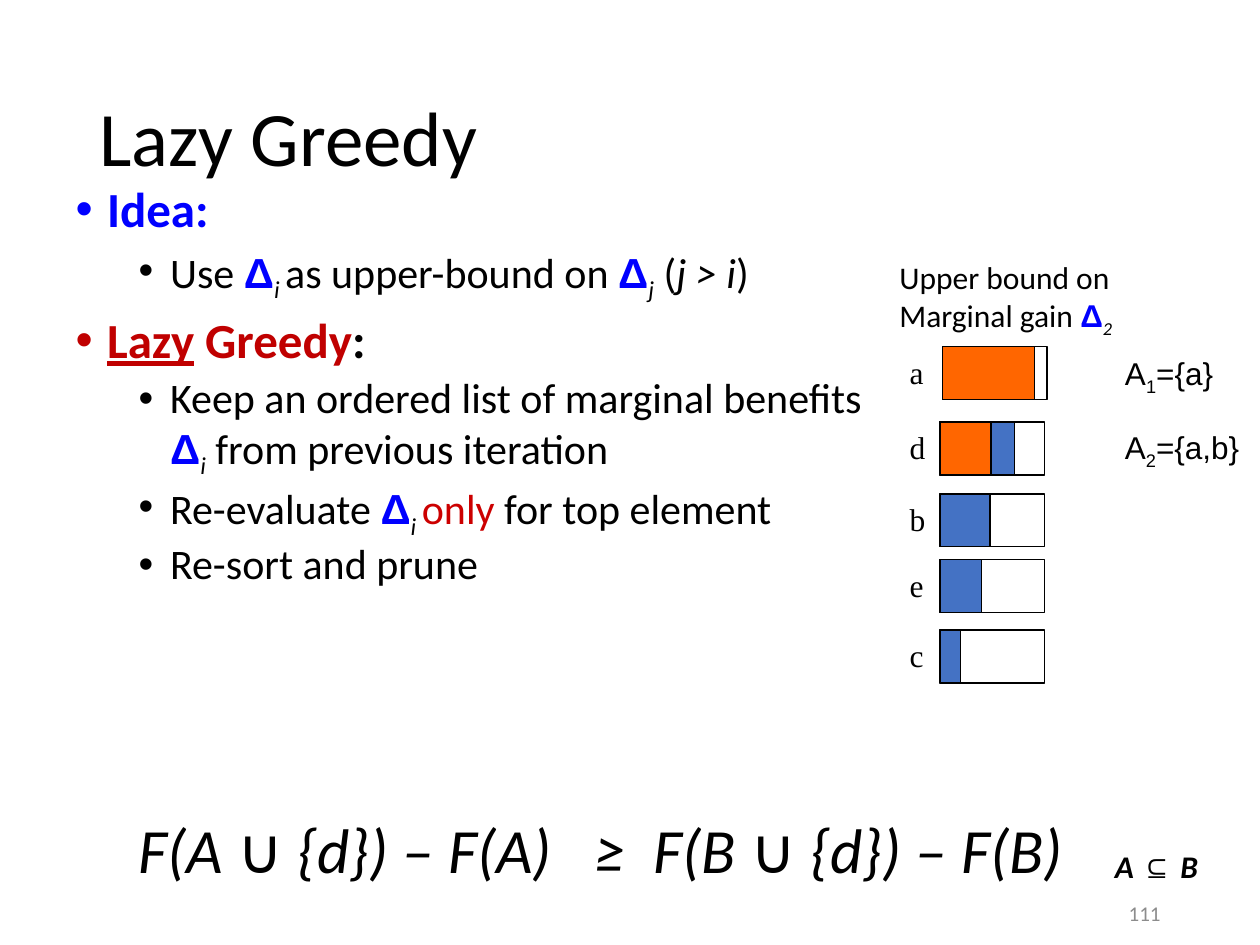
from dataclasses import dataclass

from lxml import etree
from pptx import Presentation
from pptx import util as u
from pptx.dml.color import RGBColor
from pptx.enum import shapes, text
from pptx.oxml.ns import qn


@dataclass(frozen=True)
class Theme:
    sans: str = "Calibri"
    symbol: str = "Arial"
    serif: str = "Times New Roman"
    ink: str = "000000"
    blue: str = "0000FF"
    crimson: str = "C00000"
    red: str = "CC0000"
    grey: str = "8C8C8C"
    bar: str = "4472C4"
    updated: str = "FF6600"
    title: int = 44
    formula: int = 36
    head: int = 28
    body: int = 24
    label: int = 18
    number: int = 12


THEME = Theme()

# Run formats
DELTA = dict(font=THEME.symbol, color=THEME.blue, bold=True)
INDEX = dict(italic=True, base=-25)
ITALIC = dict(italic=True)
LOWER = dict(base=-25)

# Content: each run is (text, format)
TITLE = "Lazy Greedy"
BULLETS = [
    (0, [("Idea:", dict(color=THEME.blue, bold=True))]),
    (1, [("Use ", {}), ("Δ", DELTA), ("i ", INDEX), ("as upper-bound on ", {}),
         ("Δ", DELTA), ("j", INDEX), (" (", {}), ("j > i", ITALIC), (")", {})]),
    (0, [("Lazy", dict(color=THEME.crimson, bold=True, underline=True)),
         (" Greedy", dict(color=THEME.crimson, bold=True)), (":", dict(bold=True))]),
    (1, [("Keep an ordered list of marginal benefits ", {}), ("Δ", DELTA),
         ("i", INDEX), (" from previous iteration", {})]),
    (1, [("Re-evaluate ", {}), ("Δ", DELTA), ("i ", INDEX),
         ("only ", dict(color=THEME.red)), ("for top element", {})]),
    (1, [("Re-sort and prune", {})]),
]
# Bars: label, left, top, then filled shares of the full width
BARS = [
    ("a", 74.8, 27.5, [(0.88, THEME.updated)]),
    ("d", 74.6, 33.5, [(0.71, THEME.bar), (0.49, THEME.updated)]),
    ("b", 74.6, 39.2, [(0.48, THEME.bar)]),
    ("e", 74.6, 44.4, [(0.4, THEME.bar)]),
    ("c", 74.6, 50, [(0.2, THEME.bar)]),
]
# Notes: box on the grid, size, font, wrap, runs
NOTES = [
    ((70.4, 20, 19.4, 7.1), THEME.label, THEME.sans, False,
     [("Upper bound on \nMarginal gain ", {}), ("Δ", DELTA), ("2", INDEX)]),
    ((88.3, 27.6, 9.2, 4), THEME.label, THEME.symbol, False,
     [("A", {}), ("1", LOWER), ("={a}", {})]),
    ((88.3, 33.5, 11.3, 4), THEME.label, THEME.symbol, False,
     [("A", {}), ("2", LOWER), ("={a,b}", {})]),
    ((87.5, 66.7, 8.7, 4), THEME.label, THEME.sans, False,
     [("A ", dict(bold=True, italic=True)), ("⊆ ", dict(bold=True, font=THEME.serif)),
      ("B", dict(bold=True, italic=True))]),
]
FORMULA = "F(A ∪ {d}) – F(A)\t≥\tF(B ∪ {d}) – F(B)"
FORMULA_TABS = (36.2, 40.9)
BAR_SIZE = (8.3, 4.2)

# Grid of 100 columns by 75 rows
presentation = Presentation()
presentation.slide_width, presentation.slide_height = u.Inches(10), u.Inches(7.5)
CELL = presentation.slide_width / 100
slide = presentation.slides.add_slide(presentation.slide_layouts[1])


def grid(*lengths):
    return [round(length * CELL) for length in lengths]


def write(paragraph, content, size, font=THEME.sans, color=THEME.ink,
          bold=False, italic=False, underline=False, base=0):
    for number, line in enumerate(content.split("\n")):
        if number:
            paragraph.add_line_break()
        run = paragraph.add_run()
        run.text = line
        style = run.font
        style.size, style.name = u.Pt(size), font
        style.color.rgb = RGBColor.from_string(color)
        style.bold, style.italic, style.underline = bold, italic, underline
        if base:
            run._r.get_or_add_rPr().set("baseline", str(base * 1000))


def write_runs(paragraph, runs, size, font=THEME.sans):
    for content, style in runs:
        write(paragraph, content, size, **{"font": font, **style})


def place(shape, box):
    shape.left, shape.top, shape.width, shape.height = grid(*box)


def add_note(box, size, font, wrap, runs):
    frame = slide.shapes.add_textbox(*grid(*box)).text_frame
    frame.word_wrap = wrap
    frame.auto_size = text.MSO_AUTO_SIZE.SHAPE_TO_FIT_TEXT
    write_runs(frame.paragraphs[0], runs, size, font)
    return frame


def add_bar(left, top, share=1, color=None):
    width, height = BAR_SIZE
    shape = slide.shapes.add_shape(
        shapes.MSO_SHAPE.RECTANGLE, *grid(left, top, width * share, height))
    shape.shadow.inherit = False
    if color:
        shape.fill.solid()
        shape.fill.fore_color.rgb = RGBColor.from_string(color)
    else:
        shape.fill.background()
    shape.line.color.rgb = RGBColor.from_string(THEME.ink)
    shape.line.width = u.Pt(0.75)


def set_bullet(paragraph, level):
    properties = paragraph._p.get_or_add_pPr()
    properties.set("marL", str(u.Inches(0.25 + 0.5 * level)))
    properties.set("indent", str(u.Inches(-0.25)))
    etree.SubElement(properties, qn("a:buFont"), typeface=THEME.symbol)
    etree.SubElement(properties, qn("a:buChar"), char="•")


# Title
title = slide.shapes.title
place(title, (6.9, 4, 86.2, 14.5))
title.text_frame.vertical_anchor = text.MSO_ANCHOR.MIDDLE
title.text_frame.auto_size = text.MSO_AUTO_SIZE.NONE
heading = title.text_frame.paragraphs[0]
heading.alignment, heading.line_spacing = text.PP_ALIGN.LEFT, 0.9
write(heading, TITLE, THEME.title)

# Bulleted list
body = slide.placeholders[1]
place(body, (5, 14.2, 65.4, 47.5))
body.text_frame.auto_size = text.MSO_AUTO_SIZE.NONE
for number, (level, runs) in enumerate(BULLETS):
    paragraph = body.text_frame.add_paragraph() if number else body.text_frame.paragraphs[0]
    paragraph.level, paragraph.line_spacing = level, 0.9
    paragraph.space_before = u.Pt(5 if level else 10)
    set_bullet(paragraph, level)
    write_runs(paragraph, runs, THEME.body if level else THEME.head)

# Marginal gain bars
for label, left, top, parts in BARS:
    add_bar(left, top)
    for share, color in parts:
        add_bar(left, top, share, color)
    add_note((71.2, top, 3.2, 4), THEME.label, THEME.serif, False, [(label, {})])

# Notes beside the bars and the formula
for note in NOTES:
    add_note(*note)

# Formula, its parts set on tab stops
formula = add_note((10, 63.8, 83.3, 7.1), THEME.formula, THEME.sans, True, [(FORMULA, ITALIC)])
stops = etree.SubElement(formula.paragraphs[0]._p.get_or_add_pPr(), qn("a:tabLst"))
for position in grid(*FORMULA_TABS):
    etree.SubElement(stops, qn("a:tab"), pos=str(position), algn="l")

# Slide number
footer = slide.shapes.add_textbox(*grid(70.6, 69.5, 22.5, 4)).text_frame
footer.word_wrap = True
footer.vertical_anchor, footer.margin_bottom = text.MSO_ANCHOR.BOTTOM, 0
footer.paragraphs[0].alignment = text.PP_ALIGN.RIGHT
write(footer.paragraphs[0], "111", THEME.number, color=THEME.grey)

presentation.save("out.pptx")
